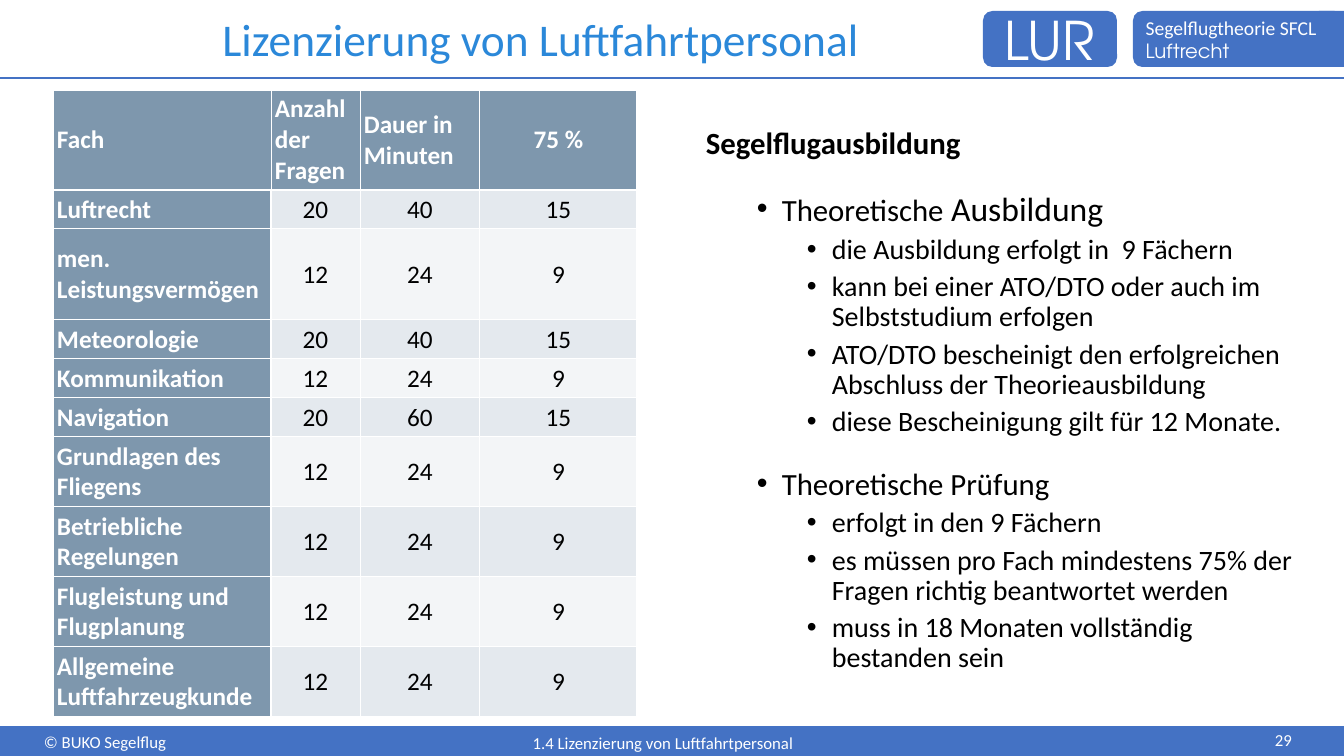
from lxml import etree
from pptx import Presentation
from pptx.dml.color import RGBColor
from pptx.enum.shapes import MSO_CONNECTOR, MSO_SHAPE
from pptx.enum.text import MSO_ANCHOR, MSO_AUTO_SIZE, PP_ALIGN
from pptx.oxml.ns import qn
from pptx.util import Emu, Pt

RECT = MSO_SHAPE.RECTANGLE
ROUNDED = MSO_SHAPE.ROUNDED_RECTANGLE
STRAIGHT = MSO_CONNECTOR.STRAIGHT
MIDDLE = MSO_ANCHOR.MIDDLE
NO_AUTOFIT = MSO_AUTO_SIZE.NONE
LEFT, CENTER = PP_ALIGN.LEFT, PP_ALIGN.CENTER

SLIDE_WIDTH, SLIDE_HEIGHT = 1344, 756
EMU_PER_PX = 914400 / 100.8
BODY_FONT, LOGO_FONT = "Calibri", "TeX Gyre Adventor"
COLORS = {
    "bar": "4472C4", "title": "2B88D9", "white": "FFFFFF", "black": "000000",
    "head": "7E97AD", "band_dark": "E4E9EE", "band_light": "F3F5F7",
}

COLUMN_WIDTHS = [218, 89, 120, 157]
HEADINGS = ["Fach", "Anzahl der Fragen", "Dauer in Minuten", "75 %"]
HEADING_HEIGHT = 100
SINGLE, DOUBLE, TALL = 39, 70, 91
# Height, subject, questions, minutes, pass mark
SUBJECTS = [
    (SINGLE, "Luftrecht", 20, 40, 15),
    (TALL, "men. Leistungsvermögen", 12, 24, 9),
    (SINGLE, "Meteorologie", 20, 40, 15),
    (SINGLE, "Kommunikation", 12, 24, 9),
    (SINGLE, "Navigation", 20, 60, 15),
    (DOUBLE, "Grundlagen des Fliegens", 12, 24, 9),
    (DOUBLE, "Betriebliche Regelungen", 12, 24, 9),
    (DOUBLE, "Flugleistung und Flugplanung", 12, 24, 9),
    (DOUBLE, "Allgemeine Luftfahrzeugkunde", 12, 24, 9),
]

# Each topic: its runs with their sizes, then its points
TOPICS = [
    ([("Theoretische", 22), (" Ausbildung", 24)], [
        "die Ausbildung erfolgt in  9 Fächern",
        "kann bei einer ATO/DTO oder auch im Selbststudium erfolgen",
        "ATO/DTO bescheinigt den erfolgreichen Abschluss der Theorieausbildung",
        "diese Bescheinigung gilt für 12 Monate.",
    ]),
    ([("Theoretische Prüfung", 22)], [
        "erfolgt in den 9 Fächern",
        "es müssen pro Fach mindestens 75% der Fragen richtig beantwortet werden",
        "muss in 18 Monaten vollständig bestanden sein",
    ]),
]


def px(length):
    return Emu(round(length * EMU_PER_PX))


def color(name):
    return RGBColor.from_string(COLORS[name])


def add_text(paragraph, text, size=18, ink="white", font=BODY_FONT, bold=False,
             align=LEFT, line_spacing=None):
    paragraph.alignment = align
    if line_spacing:
        paragraph.line_spacing = line_spacing
    run = paragraph.add_run()
    run.text = text
    run.font.size = Pt(size)
    run.font.name = font
    run.font.bold = bold
    run.font.color.rgb = color(ink)


def add_text_box(slide, left, top, width, height):
    frame = slide.shapes.add_textbox(*map(px, (left, top, width, height))).text_frame
    frame.word_wrap = True
    return frame


def add_block(slide, preset, left, top, width, height):
    block = slide.shapes.add_shape(preset, *map(px, (left, top, width, height)))
    block.shadow.inherit = False
    block.fill.solid()
    block.fill.fore_color.rgb = color("bar")
    block.line.fill.background()
    block.text_frame.vertical_anchor = MIDDLE
    return block.text_frame


def add_rule(slide, y):
    rule = slide.shapes.add_connector(STRAIGHT, 0, px(y), px(SLIDE_WIDTH), px(y))
    rule.line.color.rgb = color("bar")
    rule.line.width = Pt(1.25)
    etree.SubElement(rule._element.spPr, qn("a:effectLst"))


def set_indent(paragraph, level, margin, hanging=0):
    paragraph.level = level
    properties = paragraph._p.get_or_add_pPr()
    properties.set("marL", str(px(margin)))
    properties.set("indent", str(-px(hanging)))
    if hanging:
        etree.SubElement(properties, qn("a:buFont"), typeface="Arial")
        etree.SubElement(properties, qn("a:buChar"), char="•")


def add_bullet(frame, runs, level, margin, space_before):
    bullet = frame.add_paragraph()
    set_indent(bullet, level, margin, hanging=25)
    bullet.space_before = Pt(space_before)
    for text, size in runs:
        add_text(bullet, text, size=size, ink="black", line_spacing=0.9)


def set_borders(cell, widths):
    properties = cell._tc.get_or_add_tcPr()
    for side, width in widths.items():
        border = etree.SubElement(properties, qn(f"a:ln{side}"), w=str(Pt(width)))
        fill = etree.SubElement(border, qn("a:solidFill"))
        etree.SubElement(fill, qn("a:srgbClr"), val=COLORS["white"])


def fill_cell(cell, text, row, column):
    is_head = row == 0 or column == 0
    set_borders(cell, {
        "L": 2.25 if row > 0 and column == 1 else 0.75,
        "R": 2.25 if row > 0 and column == 0 else 0.75,
        "T": 2.25 if row == 1 else 0.75,
        "B": 2.25 if row == 0 else 0.75,
    })
    cell.fill.solid()
    band = "band_dark" if row % 2 else "band_light"
    cell.fill.fore_color.rgb = color("head" if is_head else band)
    cell.margin_left = cell.margin_right = cell.margin_top = cell.margin_bottom = px(4)
    cell.vertical_anchor = MIDDLE
    centered = column == 3 or not is_head
    add_text(cell.text_frame.paragraphs[0], str(text), bold=is_head,
             ink="white" if is_head else "black", align=CENTER if centered else LEFT)


def add_exam_table(slide, left, top):
    rows = [(HEADING_HEIGHT, *HEADINGS), *SUBJECTS]
    height = sum(row[0] for row in rows)
    exams = slide.shapes.add_table(len(rows), len(COLUMN_WIDTHS), px(left), px(top),
                                   px(sum(COLUMN_WIDTHS)), px(height)).table
    for column, width in enumerate(COLUMN_WIDTHS):
        exams.columns[column].width = px(width)
    for row, (row_height, *values) in enumerate(rows):
        exams.rows[row].height = px(row_height)
        for column, value in enumerate(values):
            fill_cell(exams.cell(row, column), value, row, column)


def add_training_text(slide):
    training = add_text_box(slide, 646, 123, 661, 565)
    heading = training.paragraphs[0]
    set_indent(heading, 1, 50)
    add_text(heading, "Segelflugausbildung", size=22, ink="black", bold=True,
             line_spacing=0.9)
    for topic, points in TOPICS:
        add_bullet(training, topic, level=2, margin=126, space_before=22)
        for point in points:
            add_bullet(training, [(point, 20)], level=3, margin=176, space_before=5)


def add_title(slide):
    title = slide.shapes.title
    title.left, title.top, title.width, title.height = map(px, (105, 14, 871, 55))
    title.text_frame.auto_size = NO_AUTOFIT
    title.text_frame.vertical_anchor = MIDDLE
    add_text(title.text_frame.paragraphs[0], "Lizenzierung von Luftfahrtpersonal",
             size=32.4, ink="title", align=CENTER, line_spacing=0.9)


def add_header(slide):
    subject_code = add_block(slide, ROUNDED, 983, 11, 134, 56)
    add_text(subject_code.paragraphs[0], "LUR", size=38, font=LOGO_FONT, align=CENTER)
    course = add_block(slide, ROUNDED, 1133, 11, 211, 56)
    add_text(course.paragraphs[0], "Segelflugtheorie SFCL", size=14)
    add_text(course.add_paragraph(), "Luftrecht", size=14, font=LOGO_FONT)
    add_block(slide, RECT, 1319, 11, 25, 56)  # squares off the right edge
    add_rule(slide, 78)


def add_footer(slide):
    add_block(slide, RECT, 0, 727, SLIDE_WIDTH, 29)
    add_rule(slide, 727)
    copyright_line = add_text_box(slide, 34, 727, 143, 29)
    add_text(copyright_line.paragraphs[0], "© BUKO Segelflug", size=12)
    chapter = add_text_box(slide, 167, 730, 992, 26)
    add_text(chapter.paragraphs[0], "1.4 Lizenzierung von Luftfahrtpersonal", size=12,
             align=CENTER, line_spacing=0.9)
    page_number = add_text_box(slide, 1265, 725, 59, 31)
    add_text(page_number.paragraphs[0], "29", size=12)


def main():
    deck = Presentation()
    deck.slide_width, deck.slide_height = px(SLIDE_WIDTH), px(SLIDE_HEIGHT)
    slide = deck.slides.add_slide(deck.slide_layouts.get_by_name("Title Only"))
    add_header(slide)
    add_footer(slide)
    add_title(slide)
    add_training_text(slide)
    add_exam_table(slide, 53, 90)
    deck.save("out.pptx")


if __name__ == "__main__":
    main()
